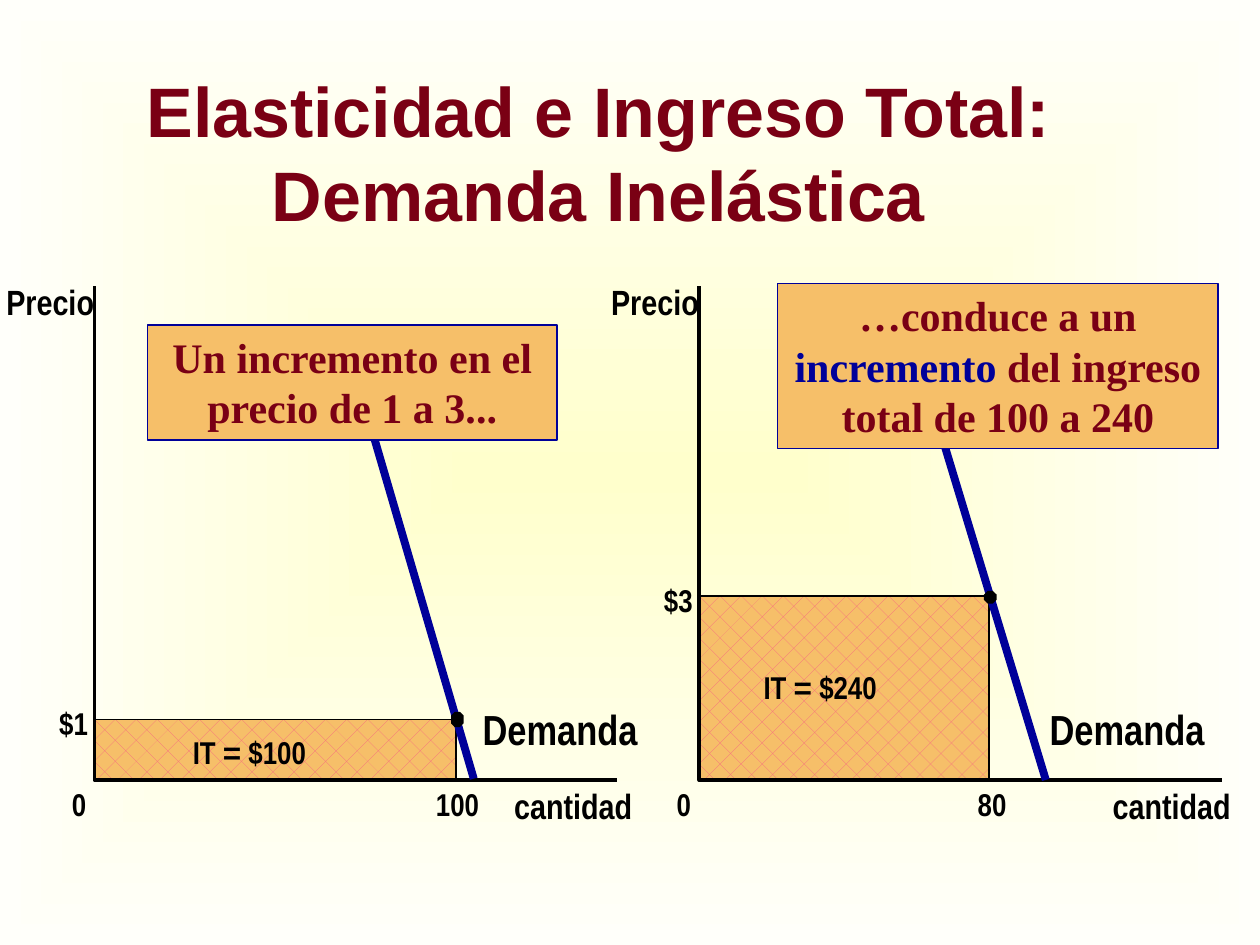
import dataclasses

import pptx
import pptx.dml.color
import pptx.enum.dml
import pptx.enum.shapes
import pptx.enum.text
import pptx.oxml.ns
import pptx.util
from lxml import etree

CELL = pptx.util.Inches(0.1)  # the slide is a grid of 100 columns by 75 rows
AXIS_TOP, AXIS_BOTTOM, AXIS_LENGTH = 22.7, 61.9, 41.5


@dataclasses.dataclass(frozen=True)
class Theme:
    title: str = "7A0014"
    callout_text: str = "790015"
    ink: str = "000000"
    accent: str = "000099"
    box: str = "F6BF69"
    hatch: str = "F76681"
    background: tuple = ("FFFFCC", "FFFFFA")
    title_font: str = "Arial"
    label_font: str = "Arial Narrow"
    callout_font: str = "Times New Roman"
    title_size: int = 40
    large: int = 24
    medium: int = 20
    small: int = 18
    axis_width: float = 2.25
    thin_width: float = 1
    demand_width: float = 4.5


@dataclasses.dataclass(frozen=True)
class Panel:
    """One price-quantity graph; columns are counted from its origin."""
    origin: float
    quantity: float
    price_row: float
    price_text: str
    quantity_text: str
    quantity_label: float
    income_text: str
    income_at: tuple
    demand_line: tuple
    demand_label: float
    axis_label: float
    dot_height: float


THEME = Theme()
PANELS = (
    Panel(55.5, 23, 47.3, "$3", "80", 22.1, " $240", (5.1, 53),
          (17.3, 28.2, 27.5, 61.9), 27.8, 32.8, 1.0),
    Panel(7.5, 28.7, 57.1, "$1", "100", 27.1, " $100", (7.8, 58.2),
          (20.4, 28.6, 30.1, 61.8), 30.8, 33.3, 1.2),
)


def grid(*cells):
    return [round(cell * CELL) for cell in cells]


def rgb(value):
    return pptx.dml.color.RGBColor.from_string(value)


def add_run(paragraph, text, size, font, color):
    run = paragraph.add_run()
    run.text = text
    run.font.size = pptx.util.Pt(size)
    run.font.name = font
    run.font.bold = True
    run.font.color.rgb = rgb(color)


def set_line(shape, color, width):
    shape.line.color.rgb = rgb(color)
    shape.line.width = pptx.util.Pt(width)


def set_background(slide):
    """Radiate the background gradient from the middle of the slide."""
    fill = slide.background.fill
    fill.gradient()
    for stop, color, position in zip(fill.gradient_stops, THEME.background, (0, 1)):
        stop.color.rgb = rgb(color)
        stop.position = position
    qn = pptx.oxml.ns.qn
    gradient = next(slide.element.iter(qn("a:gradFill")))
    gradient.remove(gradient.find(qn("a:lin")))
    shade = etree.SubElement(gradient, qn("a:path"), {"path": "shape"})
    middle = dict.fromkeys("ltrb", "50000")
    etree.SubElement(shade, qn("a:fillToRect"), middle)


def add_title(slide, text):
    title = slide.shapes.title
    title.left, title.top, title.width, title.height = grid(5, 5.8, 85, 12.5)
    frame = title.text_frame
    frame.word_wrap = True
    frame.auto_size = pptx.enum.text.MSO_AUTO_SIZE.NONE
    frame.vertical_anchor = pptx.enum.text.MSO_ANCHOR.MIDDLE
    paragraph = frame.paragraphs[0]
    paragraph.alignment = pptx.enum.text.PP_ALIGN.CENTER
    add_run(paragraph, text, THEME.title_size, THEME.title_font, THEME.title)


def add_label(slide, column, row, width, size, *parts):
    """Add a one-line label; each part is a text or a (text, font) pair."""
    box = slide.shapes.add_textbox(*grid(column, row, width, size / 6))
    frame = box.text_frame
    frame.margin_left = frame.margin_right = frame.margin_top = frame.margin_bottom = 0
    frame.word_wrap = True
    frame.auto_size = pptx.enum.text.MSO_AUTO_SIZE.SHAPE_TO_FIT_TEXT
    for part in parts:
        text, font = part if isinstance(part, tuple) else (part, THEME.label_font)
        add_run(frame.paragraphs[0], text, size, font, THEME.ink)


def add_shape(slide, kind, *box):
    shape = slide.shapes.add_shape(kind, *grid(*box))
    shape.shadow.inherit = False
    return shape


def add_polyline(slide, points, width):
    start, *others = [grid(*point) for point in points]
    builder = slide.shapes.build_freeform(*start)
    builder.add_line_segments(others, close=False)
    shape = builder.convert_to_shape()
    shape.shadow.inherit = False
    shape.fill.background()
    set_line(shape, THEME.ink, width)


def add_demand(slide, origin, ends):
    x1, y1, x2, y2 = ends
    line = slide.shapes.add_connector(
        pptx.enum.shapes.MSO_CONNECTOR.STRAIGHT, *grid(origin + x1, y1, origin + x2, y2))
    set_line(line, THEME.accent, THEME.demand_width)
    etree.SubElement(line.element.spPr, pptx.oxml.ns.qn("a:effectLst"))


def add_income_area(slide, panel):
    area = add_shape(slide, pptx.enum.shapes.MSO_SHAPE.RECTANGLE, panel.origin,
                     panel.price_row, panel.quantity, AXIS_BOTTOM - panel.price_row)
    area.fill.patterned()
    area.fill.pattern = pptx.enum.dml.MSO_PATTERN.DOTTED_DIAMOND
    area.fill.fore_color.rgb = rgb(THEME.hatch)
    area.fill.back_color.rgb = rgb(THEME.box)
    area.line.fill.background()


def add_equilibrium(slide, column, row, height):
    dot = add_shape(slide, pptx.enum.shapes.MSO_SHAPE.OCTAGON,
                    column - 0.4, row + 0.6 - height, 1, height)
    dot.fill.solid()
    dot.fill.fore_color.rgb = rgb(THEME.ink)
    dot.line.fill.background()


def add_panel(slide, panel):
    origin, row = panel.origin, panel.price_row
    equilibrium = origin + panel.quantity
    below = AXIS_BOTTOM + 0.4
    add_income_area(slide, panel)
    add_polyline(slide, [(origin, AXIS_TOP), (origin, AXIS_BOTTOM),
                         (origin + AXIS_LENGTH, AXIS_BOTTOM)], THEME.axis_width)
    add_polyline(slide, [(equilibrium, AXIS_BOTTOM), (equilibrium, row),
                         (origin, row)], THEME.thin_width)
    add_demand(slide, origin, panel.demand_line)
    add_label(slide, origin - 7, 22.3, 7.6, THEME.medium, "Precio")
    add_label(slide, origin - 2.8, row - 1.2, 2.7, THEME.small, panel.price_text)
    add_label(slide, origin - 1.8, below, 1.5, THEME.small, "0")
    add_label(slide, origin + panel.quantity_label, below, 4.2,
              THEME.small, panel.quantity_text)
    add_label(slide, origin + panel.axis_label, below, 11.2, THEME.medium, "cantidad")
    add_label(slide, origin + panel.demand_label, 55.8, 13.5, THEME.large, "Demanda")
    income_column, income_row = panel.income_at
    add_label(slide, origin + income_column, income_row, 10.5, THEME.small,
              "IT ", ("=", THEME.title_font), panel.income_text)
    add_equilibrium(slide, equilibrium, row, panel.dot_height)


def add_callout(slide, box, *parts):
    callout = add_shape(slide, pptx.enum.shapes.MSO_SHAPE.RECTANGLE, *box)
    callout.fill.solid()
    callout.fill.fore_color.rgb = rgb(THEME.box)
    set_line(callout, THEME.accent, THEME.thin_width)
    frame = callout.text_frame
    frame.word_wrap = True
    frame.auto_size = pptx.enum.text.MSO_AUTO_SIZE.SHAPE_TO_FIT_TEXT
    frame.vertical_anchor = pptx.enum.text.MSO_ANCHOR.TOP
    paragraph = frame.paragraphs[0]
    paragraph.alignment = pptx.enum.text.PP_ALIGN.CENTER
    for text, color in parts:
        add_run(paragraph, text, THEME.large, THEME.callout_font, color)


def main():
    presentation = pptx.Presentation()
    presentation.slide_width, presentation.slide_height = grid(100, 75)
    slide = presentation.slides.add_slide(presentation.slide_layouts.get_by_name("Title Only"))
    set_background(slide)
    add_title(slide, "Elasticidad e Ingreso Total: Demanda Inelástica")
    for panel in PANELS:
        add_panel(slide, panel)
    add_callout(slide, (11.7, 25.8, 32.5, 9.1),
                ("Un incremento en el precio de 1 a 3...", THEME.callout_text))
    add_callout(slide, (61.7, 22.5, 35, 13.1), ("…conduce a un ", THEME.callout_text),
                ("incremento", THEME.accent),
                (" del ingreso total de 100 a 240", THEME.callout_text))
    presentation.save("out.pptx")


if __name__ == "__main__":
    main()
